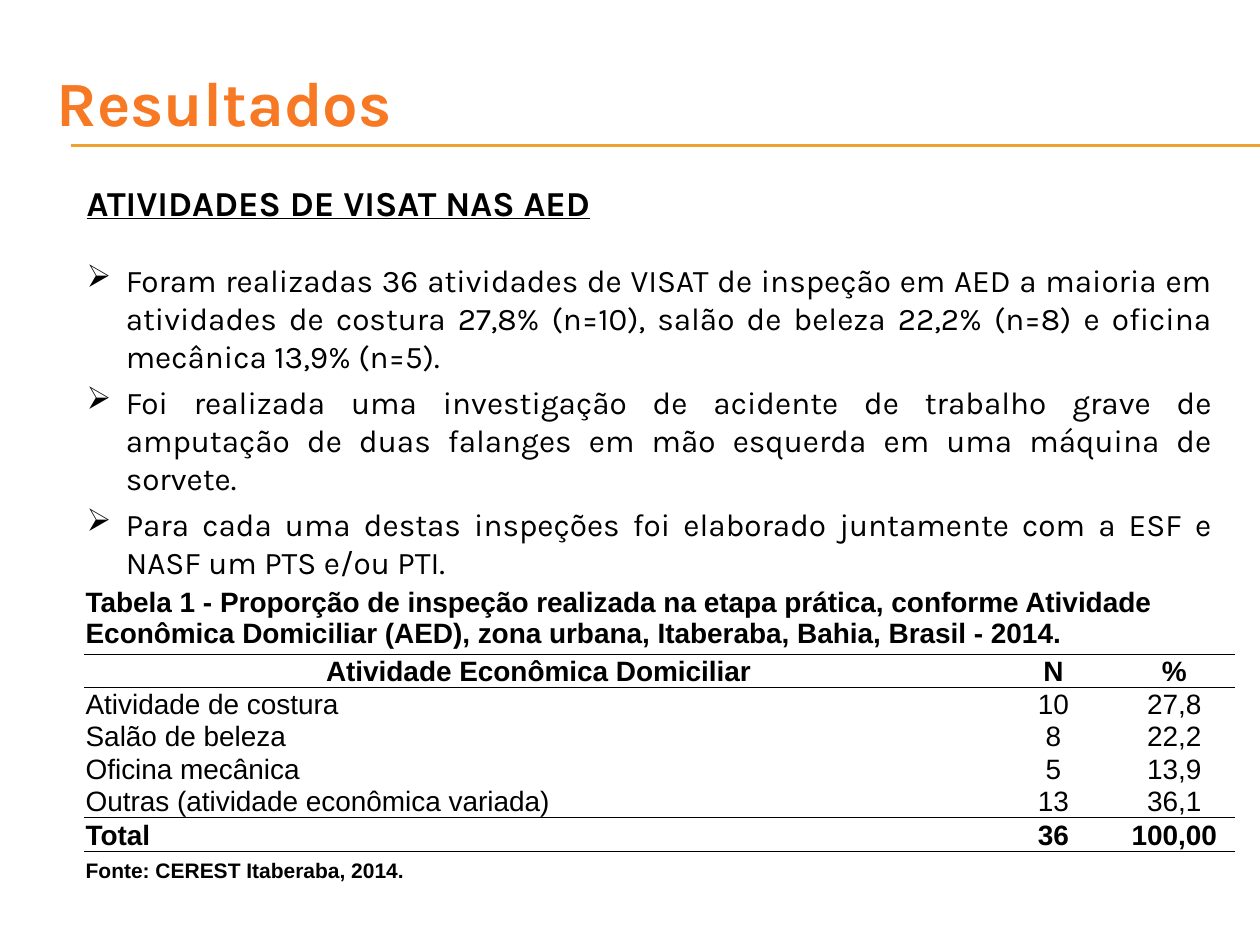
from dataclasses import dataclass

from lxml.etree import SubElement
from pptx import Presentation
from pptx.dml.color import RGBColor
from pptx.enum.shapes import MSO_CONNECTOR
from pptx.enum.text import MSO_ANCHOR, PP_ALIGN
from pptx.oxml.ns import qn
from pptx.util import Inches, Pt


@dataclass(frozen=True)
class Theme:
    heading_font: str = "Karla"
    table_font: str = "Arial"
    ink: RGBColor = RGBColor(0, 0, 0)
    paper: RGBColor = RGBColor(255, 255, 255)
    accent: RGBColor = RGBColor(0xF8, 0x79, 0x24)
    rule: RGBColor = RGBColor(0xF0, 0xA2, 0x2E)
    title_size: float = 36
    heading_size: float = 20
    body_size: float = 18
    table_size: float = 16
    source_size: float = 12
    heading_gap: float = 21.7
    bullet_gap: float = 4.8
    thin_line: float = 0.5
    thick_line: float = 1


class SlideBuilder:
    def __init__(self, slide, theme):
        self.slide = slide
        self.theme = theme

    def format_runs(self, paragraph, name, size, color, bold=False, underline=False):
        for run in paragraph.runs:
            font = run.font
            font.name = name
            font.size = Pt(size)
            font.color.rgb = color
            font.bold = bold
            font.underline = underline

    def add_rule(self, left, right, top):
        connector = self.slide.shapes.add_connector(
            MSO_CONNECTOR.STRAIGHT, Inches(left), Inches(top), Inches(right), Inches(top)
        )
        connector.line.color.rgb = self.theme.rule
        connector.line.width = Pt(0.75)
        SubElement(connector._element.spPr, qn("a:effectLst"))

    def set_title(self, text, left, top, width, height):
        title = self.slide.shapes.title
        title.left, title.top = Inches(left), Inches(top)
        title.width, title.height = Inches(width), Inches(height)
        title.text_frame.text = text
        title.text_frame.vertical_anchor = MSO_ANCHOR.MIDDLE
        paragraph = title.text_frame.paragraphs[0]
        paragraph.alignment = PP_ALIGN.LEFT
        theme = self.theme
        self.format_runs(paragraph, theme.heading_font, theme.title_size, theme.accent, bold=True)

    def add_bullet_text(self, heading, bullets, left, top, width, height):
        theme = self.theme
        shape = self.slide.shapes.add_textbox(
            Inches(left), Inches(top), Inches(width), Inches(height)
        )
        text_frame = shape.text_frame
        text_frame.word_wrap = True
        text_frame.text = heading
        paragraph = text_frame.paragraphs[0]
        paragraph.alignment = PP_ALIGN.JUSTIFY
        self.format_runs(
            paragraph, theme.heading_font, theme.heading_size, theme.ink, bold=True, underline=True
        )
        for index, bullet in enumerate(bullets):
            paragraph = text_frame.add_paragraph()
            paragraph.text = bullet
            paragraph.alignment = PP_ALIGN.JUSTIFY
            paragraph.space_before = Pt(theme.bullet_gap if index else theme.heading_gap)
            properties = paragraph._p.get_or_add_pPr()
            properties.set("marL", str(Inches(0.31)))
            properties.set("indent", str(-Inches(0.31)))
            SubElement(properties, qn("a:buChar"), char="➢")
            self.format_runs(paragraph, theme.heading_font, theme.body_size, theme.ink)

    def set_borders(self, cell, top, bottom):
        properties = cell._tc.get_or_add_tcPr()
        for side, width in (("lnL", 0), ("lnR", 0), ("lnT", top), ("lnB", bottom)):
            line = SubElement(properties, qn(f"a:{side}"), w=str(Pt(width)))
            if width:
                fill = SubElement(line, qn("a:solidFill"))
                SubElement(fill, qn("a:srgbClr"), val=str(self.theme.ink))
            else:
                SubElement(line, qn("a:noFill"))

    def fill_cell(self, cell, text, size, bold, centered, anchor):
        theme = self.theme
        cell.fill.solid()
        cell.fill.fore_color.rgb = theme.paper
        cell.margin_left = cell.margin_top = cell.margin_right = Inches(0.01)
        cell.margin_bottom = 0
        cell.vertical_anchor = anchor
        cell.text_frame.text = text
        paragraph = cell.text_frame.paragraphs[0]
        paragraph.alignment = PP_ALIGN.CENTER if centered else PP_ALIGN.LEFT
        if text:
            self.format_runs(paragraph, theme.table_font, size, theme.ink, bold=bold)
        else:
            SubElement(paragraph._p, qn("a:endParaRPr"), sz=str(int(size * 100)))

    def add_table(self, rows, widths, heights, left, top):
        theme = self.theme
        table = self.slide.shapes.add_table(
            len(rows), len(widths), Inches(left), Inches(top),
            Inches(sum(widths)), Inches(sum(heights)),
        ).table
        table.first_row = table.horz_banding = False
        for column, width in zip(table.columns, widths):
            column.width = Inches(width)
        for row, height in zip(table.rows, heights):
            row.height = Inches(height)
        caption, header, total, source = 0, 1, len(rows) - 2, len(rows) - 1
        lines_below = {
            caption: theme.thin_line,
            header: theme.thin_line,
            total - 1: theme.thin_line,
            total: theme.thick_line,
        }
        for row_index, values in enumerate(rows):
            for column_index, text in enumerate(values):
                cell = table.cell(row_index, column_index)
                self.set_borders(
                    cell, lines_below.get(row_index - 1, 0), lines_below.get(row_index, 0)
                )
                self.fill_cell(
                    cell,
                    text,
                    size=theme.source_size if row_index == source else theme.table_size,
                    bold=row_index in (caption, header, total, source),
                    centered=row_index == header or column_index > 0,
                    anchor=MSO_ANCHOR.MIDDLE if row_index <= header else MSO_ANCHOR.BOTTOM,
                )
        table.cell(caption, 0).merge(table.cell(caption, len(widths) - 1))


BULLETS = (
    "Foram realizadas 36 atividades de VISAT de inspeção em AED a maioria em atividades "
    "de costura 27,8% (n=10), salão de beleza 22,2% (n=8) e oficina mecânica 13,9% (n=5). ",
    "Foi realizada uma investigação de acidente de trabalho grave de amputação de duas "
    "falanges em mão esquerda em uma máquina de sorvete. ",
    "Para cada uma destas inspeções foi elaborado juntamente com a ESF e NASF um PTS e/ou PTI. ",
)

INSPECTION_ROWS = (
    ("Tabela 1 - Proporção de inspeção realizada na etapa prática, conforme Atividade "
     "Econômica Domiciliar (AED), zona urbana, Itaberaba, Bahia, Brasil - 2014.", "", ""),
    ("Atividade Econômica Domiciliar", "N", "%"),
    ("Atividade de costura", "10", "27,8"),
    ("Salão de beleza", "8", "22,2"),
    ("Oficina mecânica", "5", "13,9"),
    ("Outras (atividade econômica variada)", "13", "36,1"),
    ("Total", "36", "100,00"),
    ("Fonte: CEREST Itaberaba, 2014.", "", ""),
)


def main():
    presentation = Presentation()
    presentation.slide_width = Inches(10)
    presentation.slide_height = Inches(7.5)
    slide = presentation.slides.add_slide(presentation.slide_layouts[5])
    builder = SlideBuilder(slide, Theme())
    for top in (1.15, 1.16):
        builder.add_rule(0.56, 10, top)
    builder.add_table(
        INSPECTION_ROWS,
        widths=(7.21, 0.96, 0.96),
        heights=(0.57, 0.27, 0.25, 0.25, 0.25, 0.25, 0.27, 0.25),
        left=0.67,
        top=4.62,
    )
    builder.set_title("Resultados", 0.35, 0.34, 9.5, 0.92)
    builder.add_bullet_text("ATIVIDADES DE VISAT NAS AED", BULLETS, 0.59, 1.39, 9.13, 3)
    presentation.save("out.pptx")


if __name__ == "__main__":
    main()
